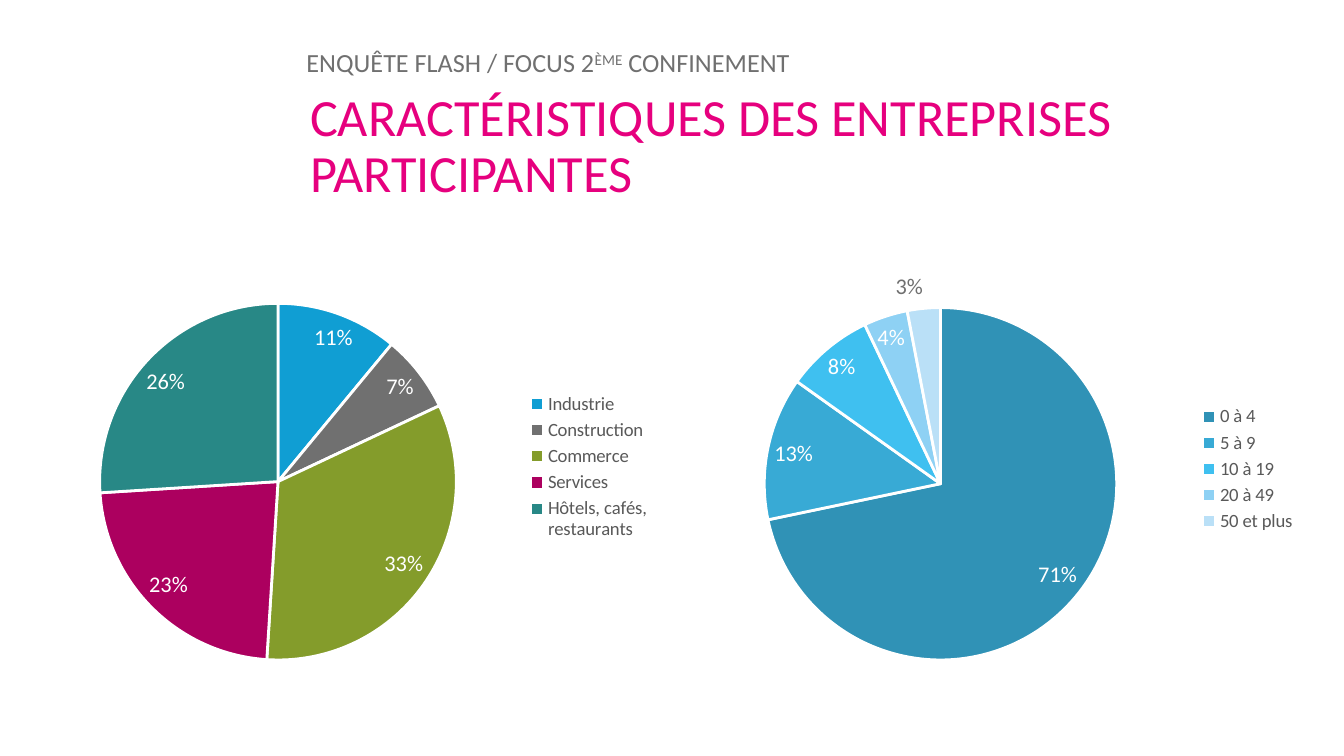
from dataclasses import dataclass

from lxml import etree
from pptx import Presentation
from pptx.chart.data import CategoryChartData
from pptx.dml.color import RGBColor
from pptx.enum.chart import XL_CHART_TYPE, XL_LABEL_POSITION, XL_LEGEND_POSITION
from pptx.enum.text import MSO_ANCHOR
from pptx.oxml.ns import qn
from pptx.util import Inches, Pt

PIE = XL_CHART_TYPE.PIE
RIGHT = XL_LEGEND_POSITION.RIGHT
BEST_FIT = XL_LABEL_POSITION.BEST_FIT
OUTSIDE_END = XL_LABEL_POSITION.OUTSIDE_END
TOP, BOTTOM = MSO_ANCHOR.TOP, MSO_ANCHOR.BOTTOM


@dataclass(frozen=True)
class Theme:
    """Colours, font and type sizes of the slide."""
    font: str = "Calibri"
    title: str = "E6007E"
    grey: str = "707070"
    legend: str = "595959"
    white: str = "FFFFFF"
    title_size: int = 28
    kicker_size: int = 14
    label_size: int = 12
    legend_size: int = 10


THEME = Theme()
PERCENT_FORMAT = '0"%"'

SECTORS = [
    ("Industrie", 11, "109ED3"),
    ("Construction", 7, "707070"),
    ("Commerce", 33, "849C2B"),
    ("Services", 23, "AC005F"),
    ("Hôtels, cafés, restaurants", 26, "288886"),
]
HEADCOUNTS = [
    ("0 à 4", 71, "3092B6"),
    ("5 à 9", 13, "38AAD5"),
    ("10 à 19", 8, "3FC0F0"),
    ("20 à 49", 4, "8ED1F4"),
    ("50 et plus", 3, "BAE0F7"),
]


def style_font(font, size, color):
    """Set the theme font with a size and colour."""
    font.name = THEME.font
    font.size = Pt(size)
    font.color.rgb = RGBColor.from_string(color)


def add_text(page, frame, spans, size, color, anchor, inset):
    """Add one wrapped paragraph made of (text, baseline) spans."""
    box = page.shapes.add_textbox(*map(Inches, frame)).text_frame
    box.word_wrap = True
    box.vertical_anchor = anchor
    box.margin_left = box.margin_right = Inches(inset)
    box.margin_top = box.margin_bottom = Inches(inset / 2)
    para = box.paragraphs[0]
    para.line_spacing = 0.9
    style_font(para.font, size, color)
    for text, baseline in spans:
        span = para.add_run()
        span.text = text
        if baseline:
            span.font._element.set("baseline", str(baseline * 1000))


def add_heading(page, left, top, width):
    """Place the kicker line and the title below it."""
    kicker = [("ENQUÊTE FLASH / FOCUS 2", 0), ("ÈME", 30), (" CONFINEMENT", 0)]
    add_text(page, (left, top, width, 0.31), kicker,
             THEME.kicker_size, THEME.grey, BOTTOM, 0.07)
    title = [("CARACTÉRISTIQUES DES ENTREPRISES PARTICIPANTES", 0)]
    add_text(page, (left, top + 0.32, width, 1.18), title,
             THEME.title_size, THEME.title, TOP, 0.1)


def set_layout(parent, index, area, inner=False):
    """Fix a chart part at fractions (x, y, w, h) of the chart."""
    for old in parent.findall(qn("c:layout")):
        parent.remove(old)
    layout = etree.Element(qn("c:layout"))
    manual = etree.SubElement(layout, qn("c:manualLayout"))
    settings = [("layoutTarget", "inner")] if inner else []
    settings += [("xMode", "edge"), ("yMode", "edge")]
    settings += zip("xywh", map(str, area))
    for name, value in settings:
        etree.SubElement(manual, qn(f"c:{name}")).set("val", value)
    parent.insert(index, layout)


def move_label_outside(point):
    """Show a slice's label outside the pie in grey."""
    label = point.data_label
    style_font(label.font, THEME.label_size, THEME.grey)
    label.position = OUTSIDE_END
    number_format = etree.Element(qn("c:numFmt"))
    number_format.set("formatCode", PERCENT_FORMAT)
    number_format.set("sourceLinked", "0")
    label._dLbl.insert(1, number_format)


def add_pie(page, frame, slices, pie_area, legend_area, outside=()):
    """Add a pie with percentage labels and a legend at the right."""
    names, values, colors = zip(*slices)
    data = CategoryChartData(number_format="#,##0")
    data.categories = names
    data.add_series("Series 1", values)
    chart = page.shapes.add_chart(PIE, *map(Inches, frame), data).chart
    chart.has_title = False
    chart.font.name = THEME.font
    chart.font.size = Pt(THEME.legend_size)
    chart.has_legend = True
    chart.legend.position = RIGHT
    chart.legend.include_in_layout = False
    style_font(chart.legend.font, THEME.legend_size, THEME.legend)
    set_layout(chart.legend._element, 1, legend_area)
    set_layout(chart._chartSpace.chart.plotArea, 0, pie_area, inner=True)

    chart.plots[0].vary_by_categories = True
    series = chart.plots[0].series[0]
    labels = series.data_labels
    labels.show_value = True
    labels.number_format = PERCENT_FORMAT
    labels.number_format_is_linked = False
    labels.position = BEST_FIT
    style_font(labels.font, THEME.label_size, THEME.white)
    for index, color in enumerate(colors):
        style = series.points[index].format
        style.fill.solid()
        style.fill.fore_color.rgb = RGBColor.from_string(color)
        style.line.color.rgb = RGBColor.from_string(THEME.white)
        style.line.width = Pt(1.5)
    for index in outside:
        move_label_outside(series.points[index])


def main():
    """Build the slide and save it."""
    deck = Presentation()
    deck.slide_width, deck.slide_height = Inches(10), Inches(10 * 9 / 16)
    page = deck.slides.add_slide(deck.slide_layouts[6])
    add_heading(page, 2.21, 0.31, 7.48)
    add_pie(page, (0.31, 1.91, 4.63, 3.16), SECTORS,
            (0.09, 0.11, 0.58, 0.84), (0.77, 0.31, 0.22, 0.37))
    add_pie(page, (5.06, 1.91, 4.67, 3.16), HEADCOUNTS,
            (0.13, 0.12, 0.57, 0.83), (0.82, 0.34, 0.17, 0.32), outside=[4])
    deck.save("out.pptx")


if __name__ == "__main__":
    main()
